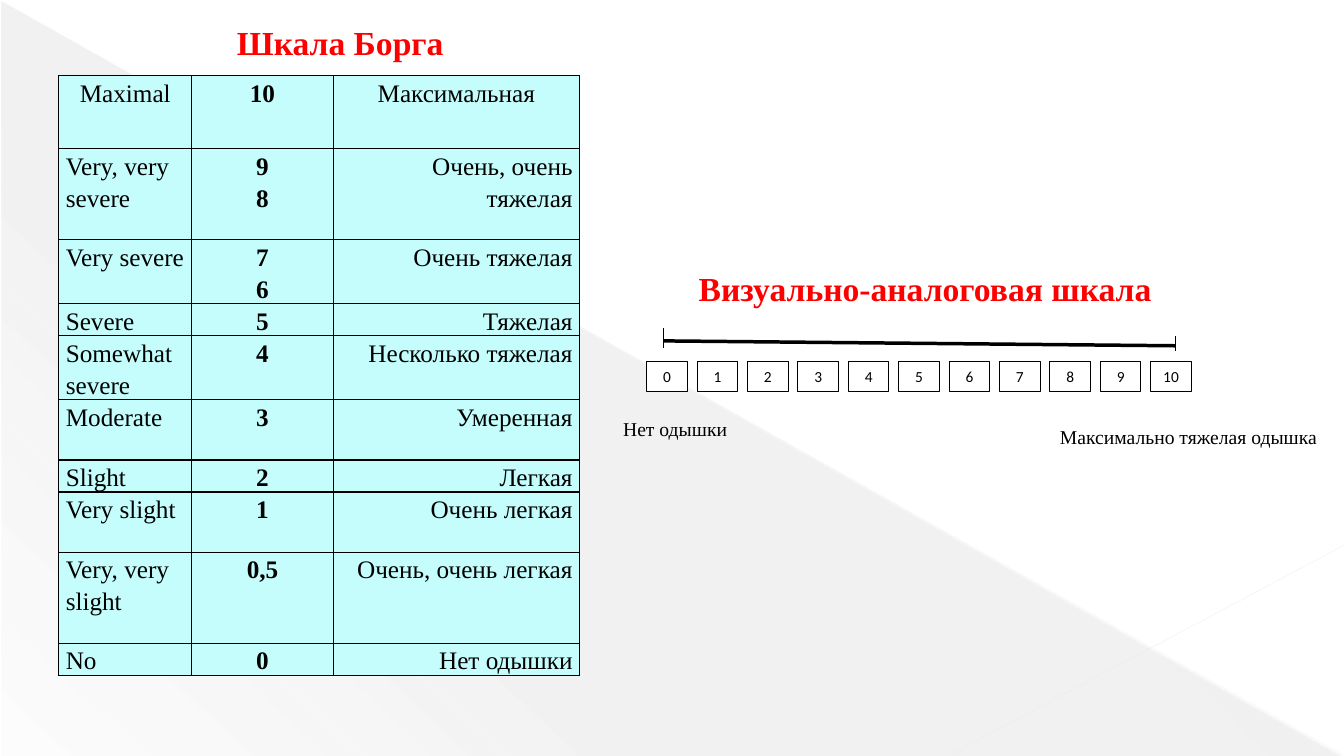
import pptx
import pptx.dml.color
import pptx.enum.shapes
import pptx.enum.text
import pptx.oxml
import pptx.oxml.ns
import pptx.util
from lxml import etree

Pt = pptx.util.Pt
RGBColor = pptx.dml.color.RGBColor
ALIGN = pptx.enum.text.PP_ALIGN
ANCHOR = pptx.enum.text.MSO_ANCHOR
SHAPE = pptx.enum.shapes.MSO_SHAPE
qn = pptx.oxml.ns.qn

BLACK = RGBColor(0x00, 0x00, 0x00)
WHITE = RGBColor(0xFF, 0xFF, 0xFF)
RED = RGBColor(0xFF, 0x00, 0x00)
CYAN = RGBColor(0xC5, 0xFD, 0xFD)
GRAY = RGBColor(0x66, 0x66, 0x66)
PALE = RGBColor(0xE8, 0xE8, 0xE8)
PALER = RGBColor(0xEA, 0xEA, 0xEA)

SERIF = "Times New Roman"
HEADING = {"name": SERIF, "size": Pt(24), "bold": True}
CELL = {"name": SERIF, "size": Pt(18), "bold": False}
LABEL = {"name": SERIF, "size": Pt(14), "bold": False}
DIGIT = {"name": "Calibri", "size": Pt(11), "bold": False}

# Height, English term, score, Russian term
BORG_ROWS = [
    (52, "Maximal", "10", "Максимальная"),
    (65, "Very, very severe", "9\n8", "Очень, очень тяжелая"),
    (43, "Very severe", "7\n6", "Очень тяжелая"),
    (22, "Severe", "5", "Тяжелая"),
    (43, "Somewhat severe", "4", "Несколько тяжелая"),
    (43, "Moderate", "3", "Умеренная"),
    (22, "Slight", "2", "Легкая"),
    (43, "Very slight", "1", "Очень легкая"),
    (65, "Very, very slight", "0,5", "Очень, очень легкая"),
    (22, "No", "0", "Нет одышки"),
]


class SlideBuilder:
    def __init__(self, slide):
        self.slide = slide
        self.shapes = slide.shapes

    def fill_text(self, frame, text, style, color=BLACK, align=ALIGN.LEFT, spacing=1.0):
        for index, words in enumerate(text.split("\n")):
            para = frame.add_paragraph() if index else frame.paragraphs[0]
            para.alignment, para.line_spacing = align, spacing
            span = para.add_run()
            span.text = words
            for name, value in style.items():
                setattr(span.font, name, value)
            span.font.color.rgb = color

    def title(self, place, text):
        box = self.shapes.title
        for name, value in zip(("left", "top", "width", "height"), place):
            setattr(box, name, Pt(value))
        self.shapes._spTree.append(box._element)  # in front of the background
        box.text_frame.vertical_anchor = ANCHOR.MIDDLE
        self.fill_text(box.text_frame, text, HEADING, RED)

    def text(self, place, text, style, color=BLACK):
        frame = self.shapes.add_textbox(*map(Pt, place)).text_frame
        frame.word_wrap = True
        frame.vertical_anchor = ANCHOR.MIDDLE
        self.fill_text(frame, text, style, color)

    def digit_box(self, place, text):
        box = self.shapes.add_shape(SHAPE.RECTANGLE, *map(Pt, place))
        box.shadow.inherit = False
        box.fill.solid()
        box.fill.fore_color.rgb = WHITE
        box.line.color.rgb = BLACK
        box.line.width = Pt(0.75)
        box.text_frame.vertical_anchor = ANCHOR.MIDDLE
        self.fill_text(box.text_frame, text, DIGIT, align=ALIGN.CENTER)

    def line(self, start, end, width, color=BLACK, opacity=100):
        line = self.shapes.add_connector(
            pptx.enum.shapes.MSO_CONNECTOR.STRAIGHT, *map(Pt, start + end))
        line.line.color.rgb = color
        line.line.width = Pt(width)
        properties = line._element.spPr
        if opacity < 100:
            tone = next(properties.iter(qn("a:srgbClr")))
            etree.SubElement(tone, qn("a:alpha"), val=str(opacity * 1000))
        etree.SubElement(properties, qn("a:effectLst"))

    def fading_triangle(self, place, color, stops, angle):
        triangle = self.shapes.add_shape(SHAPE.RIGHT_TRIANGLE, *map(Pt, place))
        triangle.shadow.inherit = False
        triangle.line.fill.background()
        triangle.fill.background()
        marks = "".join(
            f'<a:gs pos="{position * 1000}"><a:srgbClr val="{color}">'
            f'<a:alpha val="{opacity * 1000}"/></a:srgbClr></a:gs>'
            for position, opacity in stops)
        gradient = pptx.oxml.parse_xml(
            f'<a:gradFill {pptx.oxml.ns.nsdecls("a")}><a:gsLst>{marks}</a:gsLst>'
            f'<a:lin ang="{angle * 60000}" scaled="0"/></a:gradFill>')
        properties = triangle._element.spPr
        properties.replace(properties.find(qn("a:noFill")), gradient)

    def cell(self, cell, text, style, align):
        margins = {"margin_left": 5, "margin_right": 5, "margin_top": 0, "margin_bottom": 0}
        for name, value in margins.items():
            setattr(cell, name, Pt(value))
        cell.fill.solid()
        cell.fill.fore_color.rgb = CYAN
        for index, side in enumerate(("a:lnL", "a:lnR", "a:lnT", "a:lnB")):
            border = pptx.oxml.parse_xml(
                f'<{side} {pptx.oxml.ns.nsdecls("a")} w="12700"><a:solidFill>'
                f'<a:srgbClr val="{BLACK}"/></a:solidFill></{side}>')
            cell._tc.tcPr.insert(index, border)
        self.fill_text(cell.text_frame, text, style, align=align, spacing=1.15)

    def table(self, place, widths, rows):
        table = self.shapes.add_table(len(rows), len(widths), *map(Pt, place)).table
        table.first_row = table.horz_banding = False
        for column, width in zip(table.columns, widths):
            column.width = Pt(width)
        for index, (height, *texts) in enumerate(rows):
            table.rows[index].height = Pt(height)
            aligns = (ALIGN.LEFT, ALIGN.CENTER, ALIGN.RIGHT) if index else (ALIGN.CENTER,) * 3
            for column, (text, align) in enumerate(zip(texts, aligns)):
                style = {**CELL, "bold": column == 1}
                self.cell(table.cell(index, column), text, style, align)


def main():
    deck = pptx.Presentation()
    deck.slide_width, deck.slide_height = Pt(960), Pt(540)
    page = SlideBuilder(deck.slides.add_slide(deck.slide_layouts[5]))

    # Background
    page.fading_triangle((1, 1, 958, 539), GRAY, [(0, 10), (70, 8), (100, 1)], 133)
    page.line((0, 1), (959, 539), 0.39, PALE, 35)
    page.line((960, 389.5), (679, 539), 0.47, PALER, 45)

    # Borg scale
    page.table((42, 54, 372, 420), (95, 101, 176), BORG_ROWS)
    page.title((162, 12, 168, 36), "Шкала Борга")

    # Visual analogue scale
    page.text((492, 188, 360, 36), "Визуально-аналоговая шкала", HEADING, RED)
    page.line((474, 243.5), (840, 247), 2.5)
    page.line((474, 248.5), (474, 234), 0.75)
    page.line((840, 240), (840, 251), 0.75)
    for score in range(11):
        page.digit_box((462 + 36 * score, 258, 29, 21.5), str(score))
    page.text((438, 294, 93, 24.5), "Нет одышки", LABEL)
    page.text((750, 300, 206, 24.5), "Максимально тяжелая одышка", LABEL)

    deck.save("out.pptx")


if __name__ == "__main__":
    main()
